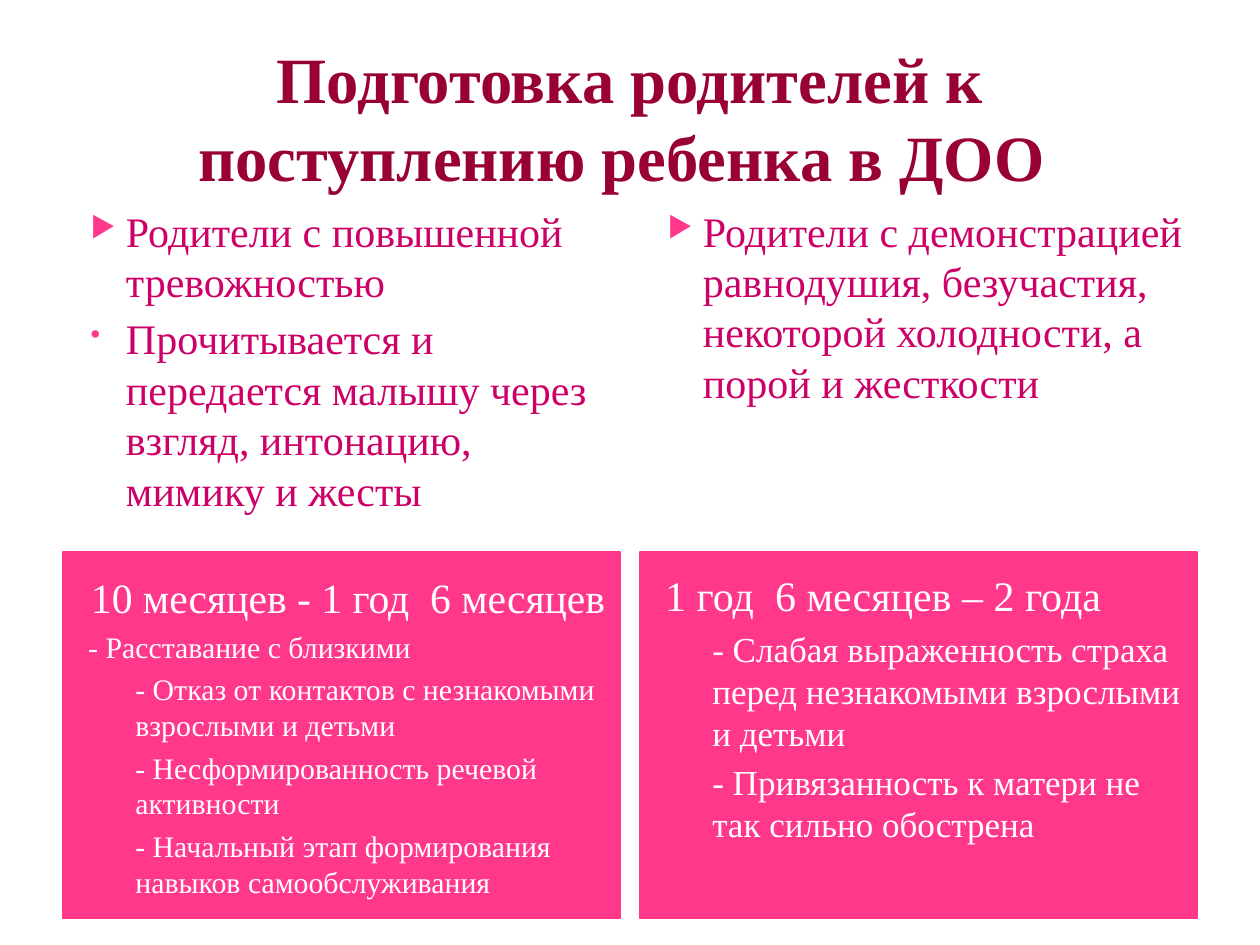
from lxml import etree
from pptx import Presentation
from pptx import util as u
from pptx.dml.color import RGBColor
from pptx.enum import shapes, text
from pptx.oxml import ns

PINK = RGBColor(0xFF, 0x38, 0x8C)
CRIMSON = RGBColor(0x99, 0x00, 0x33)
MAGENTA = RGBColor(0xCC, 0x00, 0x66)
WHITE = RGBColor(0xFF, 0xFF, 0xFF)

MARGIN, COLUMN_WIDTH, GAP = 1.27, 11.23, 0.4
COLUMNS = [MARGIN + i * (COLUMN_WIDTH + GAP) for i in range(2)]

TITLE = "Подготовка родителей к поступлению ребенка в ДОО "
PARENT_TYPES = [
    [("▶", "Родители с повышенной тревожностью"),
     ("•", "Прочитывается и передается малышу через взгляд, интонацию, мимику и жесты")],
    [("▶", "Родители с демонстрацией равнодушия, безучастия, некоторой холодности, "
           "а порой и жесткости")],
]
# Each line: text, size in points, left indent in cm
AGE_GROUPS = [
    ([("10 месяцев - 1 год  6 месяцев", 23.8, 0),
      ("- Расставание с близкими", 17, 0),
      ("- Отказ от контактов с незнакомыми взрослыми и детьми", 17, 0.95),
      ("- Несформированность речевой активности", 17, 0.95),
      ("- Начальный этап формирования навыков самообслуживания", 17, 0.95)],
     text.PP_ALIGN.CENTER, 0.13),
    ([("1 год  6 месяцев – 2 года", 24, 0),
      ("- Слабая выраженность страха перед незнакомыми взрослыми и детьми", 20, 0.95),
      ("- Привязанность к матери не так сильно обострена", 20, 0.95)],
     text.PP_ALIGN.LEFT, 1.28),
]


class SlideBuilder:
    font_name = "Times New Roman"
    space_before = u.Pt(4)

    def __init__(self, slide):
        self.slide = slide

    def paragraph(self, frame, index, content, size, color, indent=0, bullet=None):
        paragraph = frame.paragraphs[0] if index == 0 else frame.add_paragraph()
        paragraph.text = content
        if index:
            paragraph.space_before = self.space_before
        properties = paragraph._p.get_or_add_pPr()
        if indent:
            properties.set("marL", str(u.Cm(indent)))
        if bullet:
            properties.set("indent", str(u.Cm(-0.71)))
            bullet_color = etree.SubElement(properties, ns.qn("a:buClr"))
            etree.SubElement(bullet_color, ns.qn("a:srgbClr"), val=str(PINK))
            etree.SubElement(properties, ns.qn("a:buSzPct"), val="68000")
            etree.SubElement(properties, ns.qn("a:buChar"), char=bullet)
        for run in paragraph.runs:
            run.font.name = self.font_name
            run.font.size = u.Pt(size)
            run.font.color.rgb = color
        return paragraph

    def text_box(self, left, top, width, height):
        box = self.slide.shapes.add_textbox(u.Cm(left), u.Cm(top), u.Cm(width), u.Cm(height))
        box.text_frame.word_wrap = True
        return box.text_frame

    def title(self, content):
        frame = self.text_box(MARGIN, 0.76, 22.86, 3.18)
        frame.vertical_anchor = text.MSO_ANCHOR.MIDDLE
        paragraph = self.paragraph(frame, 0, content, 36.9, CRIMSON)
        paragraph.alignment = text.PP_ALIGN.CENTER
        paragraph.runs[0].font.bold = True

    def bullet_list(self, left, items):
        frame = self.text_box(left, 4.01, COLUMN_WIDTH, 6.91)
        for index, (bullet, content) in enumerate(items):
            self.paragraph(frame, index, content, 24, MAGENTA, 1.02, bullet)

    def age_panel(self, left, lines, heading_alignment, bottom_inset):
        shape = self.slide.shapes.add_shape(
            shapes.MSO_SHAPE.RECTANGLE, u.Cm(left), u.Cm(11.13), u.Cm(COLUMN_WIDTH), u.Cm(7.39))
        shape.shadow.inherit = False
        shape.fill.solid()
        shape.fill.fore_color.rgb = PINK
        shape.line.color.rgb = PINK
        shape.line.width = u.Pt(0.75)
        frame = shape.text_frame
        frame.word_wrap = True
        frame.vertical_anchor = text.MSO_ANCHOR.MIDDLE
        frame.margin_left, frame.margin_right = u.Cm(0.51), u.Cm(0.25)
        frame.margin_top, frame.margin_bottom = u.Cm(0.13), u.Cm(bottom_inset)
        for index, (content, size, indent) in enumerate(lines):
            paragraph = self.paragraph(frame, index, content, size, WHITE, indent)
            paragraph.alignment = text.PP_ALIGN.LEFT if index else heading_alignment


def main():
    presentation = Presentation()
    presentation.slide_width, presentation.slide_height = u.Cm(25.4), u.Cm(19.05)
    builder = SlideBuilder(presentation.slides.add_slide(presentation.slide_layouts[6]))
    builder.title(TITLE)
    for left, (lines, alignment, bottom_inset) in zip(COLUMNS, AGE_GROUPS):
        builder.age_panel(left, lines, alignment, bottom_inset)
    for left, items in zip(COLUMNS, PARENT_TYPES):
        builder.bullet_list(left, items)
    presentation.save("out.pptx")


if __name__ == "__main__":
    main()
